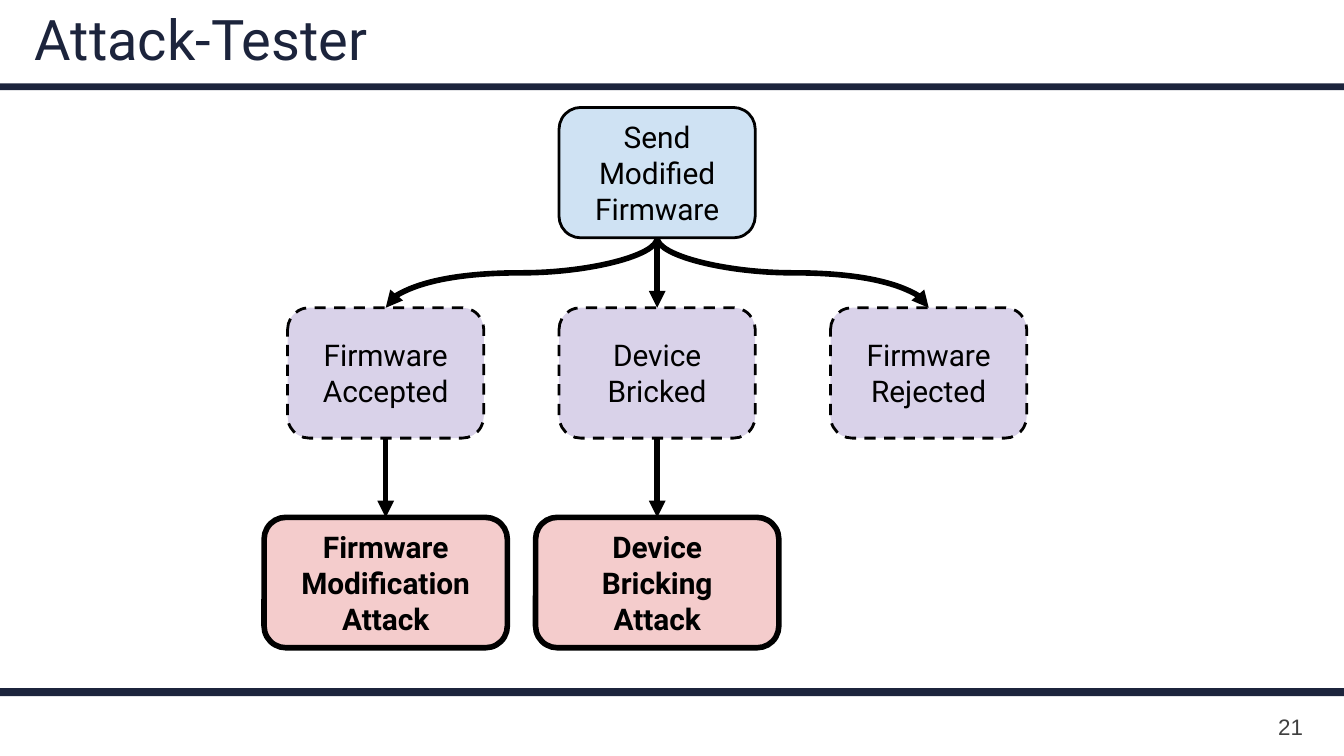
from dataclasses import dataclass

from lxml import etree
from pptx import Presentation
from pptx.dml.color import RGBColor
from pptx.enum.dml import MSO_LINE
from pptx.enum.shapes import MSO_CONNECTOR, MSO_SHAPE
from pptx.enum.text import MSO_ANCHOR, PP_ALIGN
from pptx.oxml.ns import qn
from pptx.util import Inches, Pt

ROUNDED, RECT = MSO_SHAPE.ROUNDED_RECTANGLE, MSO_SHAPE.RECTANGLE
STRAIGHT, CURVE = MSO_CONNECTOR.STRAIGHT, MSO_CONNECTOR.CURVE
DASH = MSO_LINE.DASH
TOP, MIDDLE = MSO_ANCHOR.TOP, MSO_ANCHOR.MIDDLE
LEFT, CENTER = PP_ALIGN.LEFT, PP_ALIGN.CENTER


@dataclass(frozen=True)
class Theme:
    navy: str = "1C243C"
    ink: str = "000000"
    grey: str = "404040"
    action: str = "CFE2F3"
    outcome: str = "D9D2E9"
    attack: str = "F4CCCC"
    font: str = "Roboto"
    number_font: str = "Arial"
    title_size: float = 30
    node_size: float = 16
    number_size: float = 12
    thin: float = 1.5
    thick: float = 3


@dataclass(frozen=True)
class Style:
    fill: str
    width: float
    line: float
    dashed: bool = False
    bold: bool = False


@dataclass(frozen=True)
class Node:
    text: str
    col: int
    row: int
    style: Style

    @property
    def x(self) -> float:
        return FIRST_CENTER + self.col * COL_PITCH

    @property
    def top(self) -> float:
        return ROW_TOPS[self.row]

    @property
    def bottom(self) -> float:
        return self.top + NODE_H


THEME = Theme()
SLIDE_W = 10
SLIDE_H = SLIDE_W * 9 / 16
FIRST_CENTER, COL_PITCH = 2.87, 2.02
ROW_TOPS = (0.8, 2.29, 3.85)
NODE_H = 0.97

ACTION = Style(THEME.action, 1.46, THEME.thin)
OUTCOME = Style(THEME.outcome, 1.46, THEME.thin, dashed=True)
ATTACK = Style(THEME.attack, 1.81, THEME.thick, bold=True)

SEND = Node("Send Modified Firmware", 1, 0, ACTION)
ACCEPTED = Node("Firmware Accepted", 0, 1, OUTCOME)
BRICKED = Node("Device Bricked", 1, 1, OUTCOME)
REJECTED = Node("Firmware Rejected", 2, 1, OUTCOME)
MODIFICATION = Node("Firmware Modification Attack", 0, 2, ATTACK)
BRICKING = Node("Device Bricking Attack", 1, 2, ATTACK)

NODES = (SEND, REJECTED, ACCEPTED, BRICKED, MODIFICATION, BRICKING)
EDGES = ((SEND, ACCEPTED), (SEND, REJECTED), (SEND, BRICKED),
         (ACCEPTED, MODIFICATION), (BRICKED, BRICKING))


def rgb(value: str) -> RGBColor:
    return RGBColor.from_string(value)


def write(sp, text: str, size: float, color: str, font: str = THEME.font,
          bold: bool = False, align=LEFT, anchor=MIDDLE,
          inset: tuple[float, float] = (0.07, 0.04), spacing: float = 1.0) -> None:
    tf = sp.text_frame
    tf.text = text
    tf.word_wrap = True
    tf.vertical_anchor = anchor
    tf.margin_left = tf.margin_right = Inches(inset[0])
    tf.margin_top = tf.margin_bottom = Inches(inset[1])
    p = tf.paragraphs[0]
    p.alignment, p.line_spacing = align, spacing
    r = p.runs[0]
    r.font.name, r.font.size, r.font.bold = font, Pt(size), bold
    r.font.color.rgb = rgb(color)


def add_bar(slide, top: float, height: float) -> None:
    sp = slide.shapes.add_shape(RECT, 0, Inches(top), Inches(SLIDE_W), Inches(height))
    sp.shadow.inherit = False
    sp.fill.solid()
    sp.fill.fore_color.rgb = rgb(THEME.navy)
    sp.line.fill.background()


def add_node(slide, node: Node) -> None:
    style = node.style
    sp = slide.shapes.add_shape(ROUNDED, Inches(node.x - style.width / 2), Inches(node.top),
                                Inches(style.width), Inches(NODE_H))
    sp.shadow.inherit = False
    sp.fill.solid()
    sp.fill.fore_color.rgb = rgb(style.fill)
    sp.line.color.rgb = rgb(THEME.ink)
    sp.line.width = Pt(style.line)
    if style.dashed:
        sp.line.dash_style = DASH
    write(sp, node.text, THEME.node_size, THEME.ink, bold=style.bold,
          align=CENTER, inset=(0.1, 0.1))


def add_arrow(slide, start: Node, end: Node) -> None:
    """Join two nodes; a curve is a quarter-turned box, so it leaves vertically."""
    x1, y1, x2, y2 = start.x, start.bottom, end.x, end.top
    curved = start.col != end.col
    if curved:
        cx, cy = (x1 + x2) / 2, (y1 + y2) / 2
        half_w, half_h = (y2 - y1) / 2, abs(x2 - x1) / 2
        side = 1 if x2 > x1 else -1
        x1, x2 = cx + side * half_w, cx - side * half_w
        y1, y2 = cy - half_h, cy + half_h
    line = slide.shapes.add_connector(CURVE if curved else STRAIGHT,
                                      Inches(x1), Inches(y1), Inches(x2), Inches(y2))
    line.line.color.rgb = rgb(THEME.ink)
    line.line.width = Pt(THEME.thick)
    props = line._element.spPr
    if curved:
        degrees = 270 if side > 0 else 90
        props.find(qn("a:xfrm")).set("rot", str(degrees * 60000))
    etree.SubElement(props.find(qn("a:ln")), qn("a:tailEnd"), type="triangle")
    etree.SubElement(props, qn("a:effectLst"))


def add_label(slide, left: float, top: float, width: float, height: float):
    return slide.shapes.add_textbox(Inches(left), Inches(top), Inches(width), Inches(height))


def main() -> None:
    prs = Presentation()
    prs.slide_width, prs.slide_height = Inches(SLIDE_W), Inches(SLIDE_H)
    slide = prs.slides.add_slide(prs.slide_layouts[6])
    add_bar(slide, 5.12, 0.06)
    add_bar(slide, 0.62, 0.05)
    write(add_label(slide, 9.44, 5.31, 0.52, 0.19), "21",
          THEME.number_size, THEME.grey, font=THEME.number_font)
    write(add_label(slide, 0.19, 0.05, 9.49, 0.62), "Attack-Tester",
          THEME.title_size, THEME.navy, anchor=TOP, spacing=0.9)
    for node in NODES:
        add_node(slide, node)
    for start, end in EDGES:
        add_arrow(slide, start, end)
    prs.save("out.pptx")


if __name__ == "__main__":
    main()
